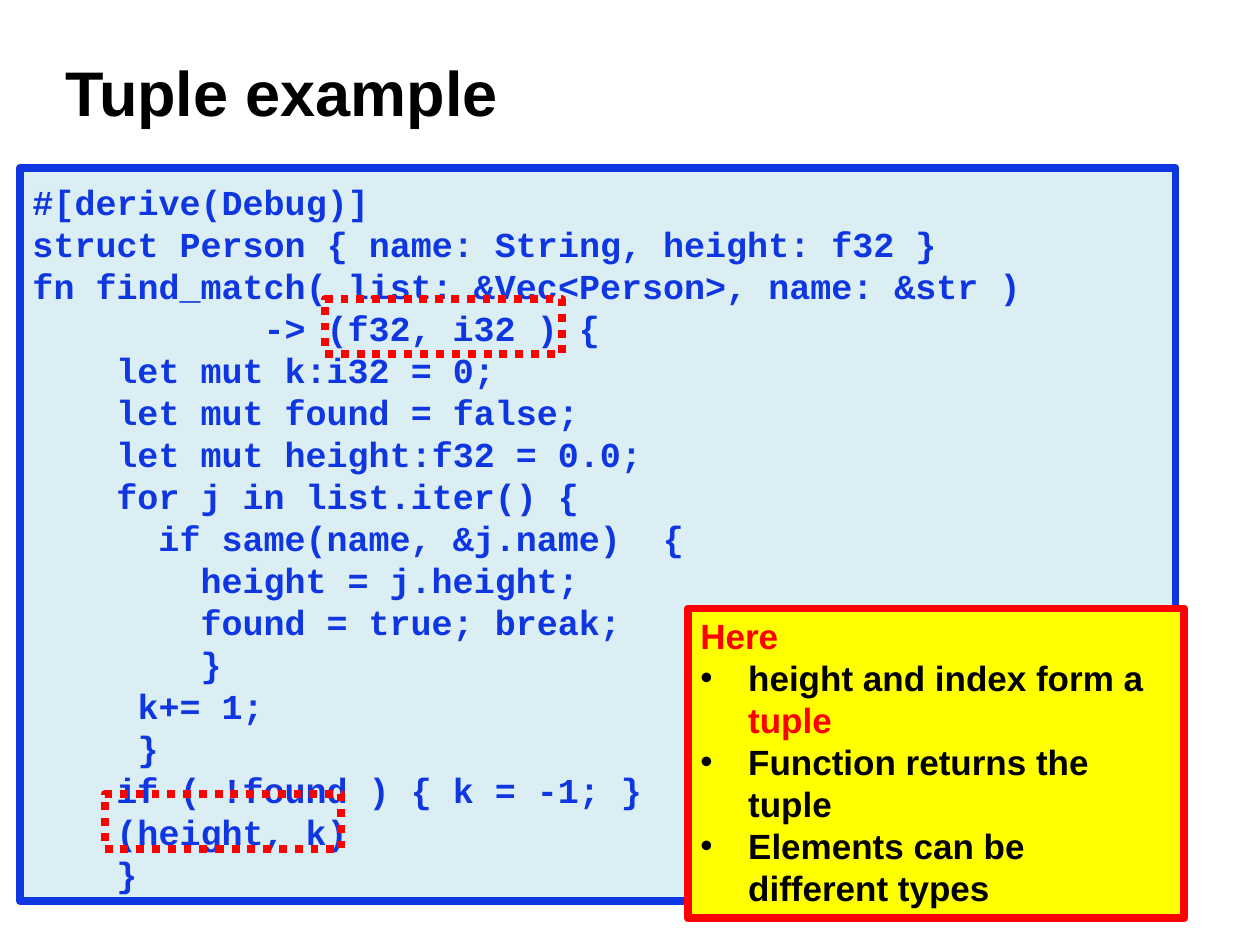
from pptx import Presentation
from pptx.dml.color import RGBColor
from pptx.enum.dml import MSO_LINE
from pptx.enum.shapes import MSO_SHAPE
from pptx.enum.text import MSO_ANCHOR, PP_ALIGN
from pptx.oxml.ns import qn
from pptx.util import Inches, Pt

BLUE, RED, BLACK = "0F37E1", "FF0000", "000000"
PALE_BLUE, YELLOW = "DBEEF4", "FFFF00"
COLUMN_WIDTH = 1 / 6
BULLET_INDENT = 0.38

TITLE = "Tuple example"
CODE = [
    (0, "#[derive(Debug)]"),
    (0, "struct Person { name: String, height: f32 }"),
    (0, "fn find_match( list: &Vec<Person>, name: &str )"),
    (11, "-> (f32, i32 ) {"),
    (4, "let mut k:i32 = 0;"),
    (4, "let mut found = false;"),
    (4, "let mut height:f32 = 0.0;"),
    (4, "for j in list.iter() {"),
    (6, "if same(name, &j.name)  {"),
    (8, "height = j.height;"),
    (8, "found = true; break;"),
    (8, "}"),
    (5, "k+= 1;"),
    (5, "}"),
    (4, "if ( !found ) { k = -1; }"),
    (4, "(height, k)"),
    (4, "}"),
]
NOTE_HEADING = "Here"
NOTE_POINTS = [
    [("height and index form a ", BLACK), ("tuple", RED)],
    [("Function returns the tuple", BLACK)],
    [("Elements can be different types", BLACK)],
]
TUPLE_MARKS = [(2.58, 2.37), (0.83, 6.3)]


def color(value):
    return RGBColor.from_string(value)


def add_box(slide, left, top, width, height, line, fill=None, dash=None):
    shape = slide.shapes.add_shape(
        MSO_SHAPE.RECTANGLE, Inches(left), Inches(top), Inches(width), Inches(height))
    shape.shadow.inherit = False
    if fill:
        shape.fill.solid()
        shape.fill.fore_color.rgb = color(fill)
    else:
        shape.fill.background()
    shape.line.color.rgb = color(line)
    shape.line.width = Pt(4.5)
    if dash:
        shape.line.dash_style = dash
    return shape


def set_frame(shape, anchor):
    frame = shape.text_frame
    frame.word_wrap = True
    frame.vertical_anchor = anchor
    return frame


def add_text(frame, runs, size=20, font="Arial", indent=0, bullet=None, spacing=Pt(24)):
    paragraph = frame.paragraphs[0]
    if paragraph.runs:
        paragraph = frame.add_paragraph()
    paragraph.alignment = PP_ALIGN.LEFT
    paragraph.line_spacing = spacing
    properties = paragraph._p.get_or_add_pPr()
    properties.set("marL", str(Inches(indent)))
    if bullet:
        properties.set("indent", str(-Inches(indent)))
        bullet_font = properties.makeelement(qn("a:buFont"), {"typeface": "Arial"})
        bullet_character = properties.makeelement(qn("a:buChar"), {"char": bullet})
        properties.extend([bullet_font, bullet_character])
    for text, text_color in runs:
        run = paragraph.add_run()
        run.text = text
        run.font.size = Pt(size)
        run.font.name = font
        run.font.bold = True
        run.font.color.rgb = color(text_color)


def main():
    presentation = Presentation()
    presentation.slide_width = Inches(10)
    presentation.slide_height = Inches(7.5)
    slide = presentation.slides.add_slide(presentation.slide_layouts[6])

    title = slide.shapes.add_textbox(Inches(0.42), Inches(0.21), Inches(8.99), Inches(1.03))
    add_text(set_frame(title, MSO_ANCHOR.MIDDLE), [(TITLE, BLACK)], size=36, spacing=1.0)

    code_box = add_box(slide, 0.16, 1.33, 9.17, 5.82, BLUE, PALE_BLUE)
    code_frame = set_frame(code_box, MSO_ANCHOR.BOTTOM)
    for columns, text in CODE:
        add_text(code_frame, [(text, BLUE)], font="Courier New", indent=columns * COLUMN_WIDTH)

    note_box = add_box(slide, 5.46, 4.83, 3.94, 2.46, RED, YELLOW)
    note_frame = set_frame(note_box, MSO_ANCHOR.TOP)
    add_text(note_frame, [(NOTE_HEADING, RED)])
    for runs in NOTE_POINTS:
        add_text(note_frame, runs, indent=BULLET_INDENT, bullet="•")

    for left, top in TUPLE_MARKS:
        add_box(slide, left, top, 1.88, 0.44, RED, dash=MSO_LINE.ROUND_DOT)

    presentation.save("out.pptx")


if __name__ == "__main__":
    main()
